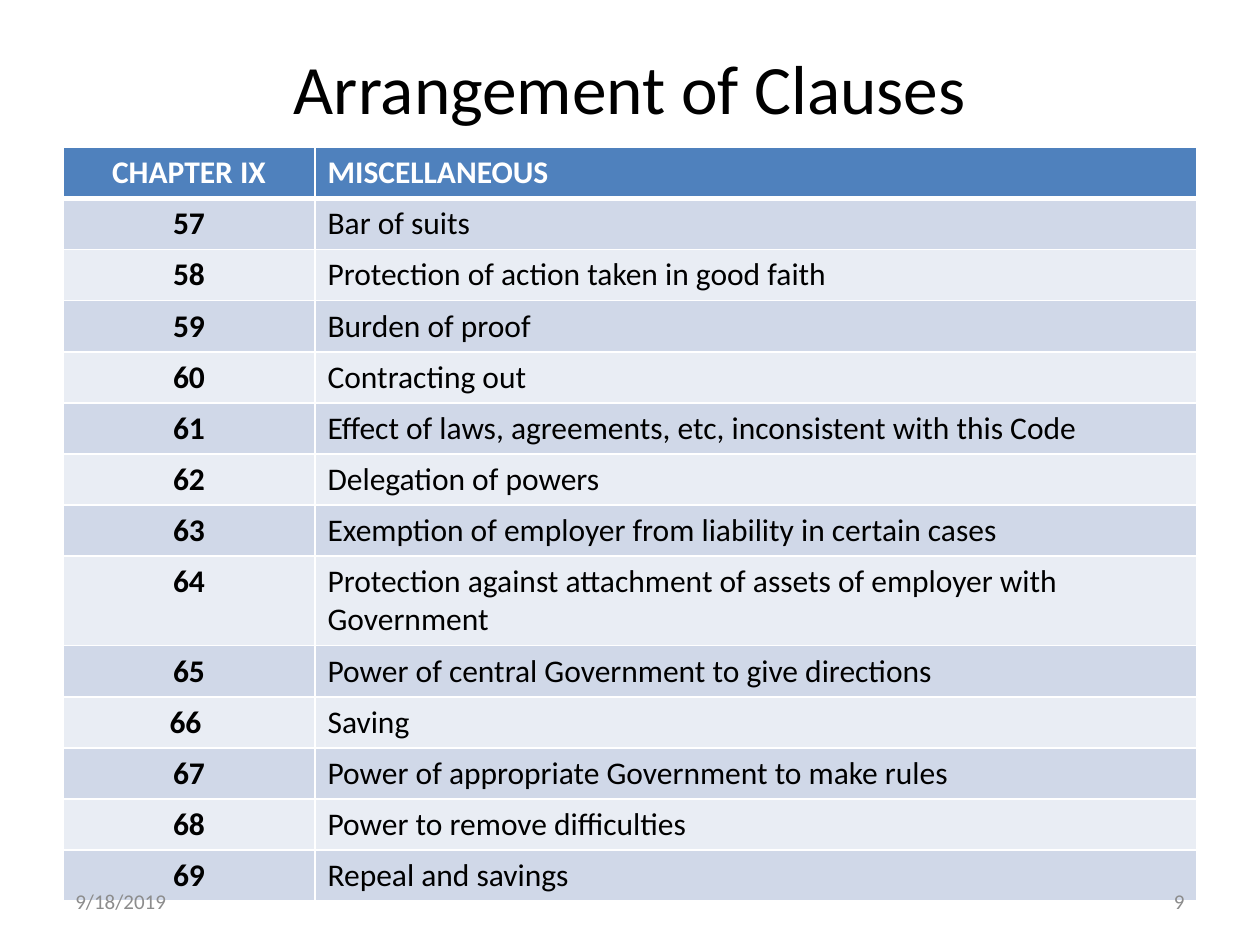
from lxml import etree
from pptx import Presentation
from pptx import util as u
from pptx.dml.color import RGBColor
from pptx.enum import text
from pptx.oxml import ns

COLORS = {
    "ink": "000000",
    "white": "FFFFFF",
    "header": "4F81BD",
    "odd": "D0D8E8",
    "even": "E9EDF4",
    "footer": "8C8C8C",
}
ALIGN = text.PP_ALIGN
CLAUSES = [
    ("CHAPTER IX", "MISCELLANEOUS"),
    ("57", "Bar of suits"),
    ("58", "Protection of action taken in good faith"),
    ("59", "Burden of proof"),
    ("60", "Contracting out"),
    ("61", "Effect of laws, agreements, etc, inconsistent with this Code"),
    ("62", "Delegation of powers"),
    ("63", "Exemption of employer from liability in certain cases"),
    ("64", "Protection against attachment of assets of employer with Government"),
    ("65", "Power of central Government to give directions"),
    ("66 ", "Saving"),
    ("67", "Power of appropriate Government to make rules"),
    ("68", "Power to remove difficulties"),
    ("69", "Repeal and savings"),
]


class ClauseSlide:
    font_name = "Calibri"

    def __init__(self, deck):
        self.slide = deck.slides.add_slide(deck.slide_layouts[5])

    def add_words(self, frame, words, color, align=ALIGN.LEFT, **font_format):
        paragraph = frame.paragraphs[0]
        paragraph.alignment = align
        run = paragraph.add_run()
        run.text = words
        run.font.color.rgb = RGBColor.from_string(COLORS[color])
        for key, value in {"name": self.font_name, **font_format}.items():
            setattr(run.font, key, value)

    def place(self, shape, left, top, width, height):
        box = {"left": left, "top": top, "width": width, "height": height}
        for key, value in box.items():
            setattr(shape, key, u.Inches(value))

    def title(self, words, *box):
        heading = self.slide.shapes.title
        self.place(heading, *box)
        heading.text_frame.vertical_anchor = text.MSO_ANCHOR.MIDDLE
        self.add_words(heading.text_frame, words, "ink", ALIGN.CENTER, size=u.Pt(39.6))

    def footer(self, words, align, *box):
        note = self.slide.shapes.add_textbox(*map(u.Inches, box)).text_frame
        note.word_wrap = True
        note.vertical_anchor = text.MSO_ANCHOR.MIDDLE
        self.add_words(note, words, "footer", align, size=u.Pt(12))

    def border(self, cell, widths):
        properties = cell._tc.get_or_add_tcPr()
        for side, width in widths.items():
            line = etree.SubElement(properties, ns.qn(f"a:ln{side}"), w=str(u.Pt(width)))
            fill = etree.SubElement(line, ns.qn("a:solidFill"))
            etree.SubElement(fill, ns.qn("a:srgbClr"), val=COLORS["white"])

    def table(self, rows, column_widths, *box):
        grid = self.slide.shapes.add_table(
            len(rows), len(column_widths), *map(u.Inches, box)
        ).table
        for column, width in zip(grid.columns, column_widths):
            column.width = u.Inches(width)
        for r, row in enumerate(rows):
            band = "header" if r == 0 else "odd" if r % 2 else "even"
            for c, words in enumerate(row):
                cell = grid.cell(r, c)
                self.border(cell, {"L": 1, "R": 1, "T": 3 if r == 1 else 1, "B": 3 if r == 0 else 1})
                cell.fill.solid()
                cell.fill.fore_color.rgb = RGBColor.from_string(COLORS[band])
                self.add_words(
                    cell.text_frame,
                    words,
                    "white" if r == 0 else "ink",
                    ALIGN.CENTER if c == 0 else ALIGN.LEFT,
                    size=u.Pt(18),
                    bold=r == 0 or c == 0,
                )


def main():
    deck = Presentation()
    deck.slide_width, deck.slide_height = u.Inches(10), u.Inches(7.5)
    page = ClauseSlide(deck)
    page.title("Arrangement of Clauses", 0.5, 0.3, 9, 0.78)
    page.table(CLAUSES, (2, 7), 0.5, 1.17, 9, 5.67)
    page.footer("9/18/2019", ALIGN.LEFT, 0.5, 6.95, 2.33, 0.4)
    page.footer("9", ALIGN.RIGHT, 7.17, 6.95, 2.33, 0.4)
    deck.save("out.pptx")


if __name__ == "__main__":
    main()
